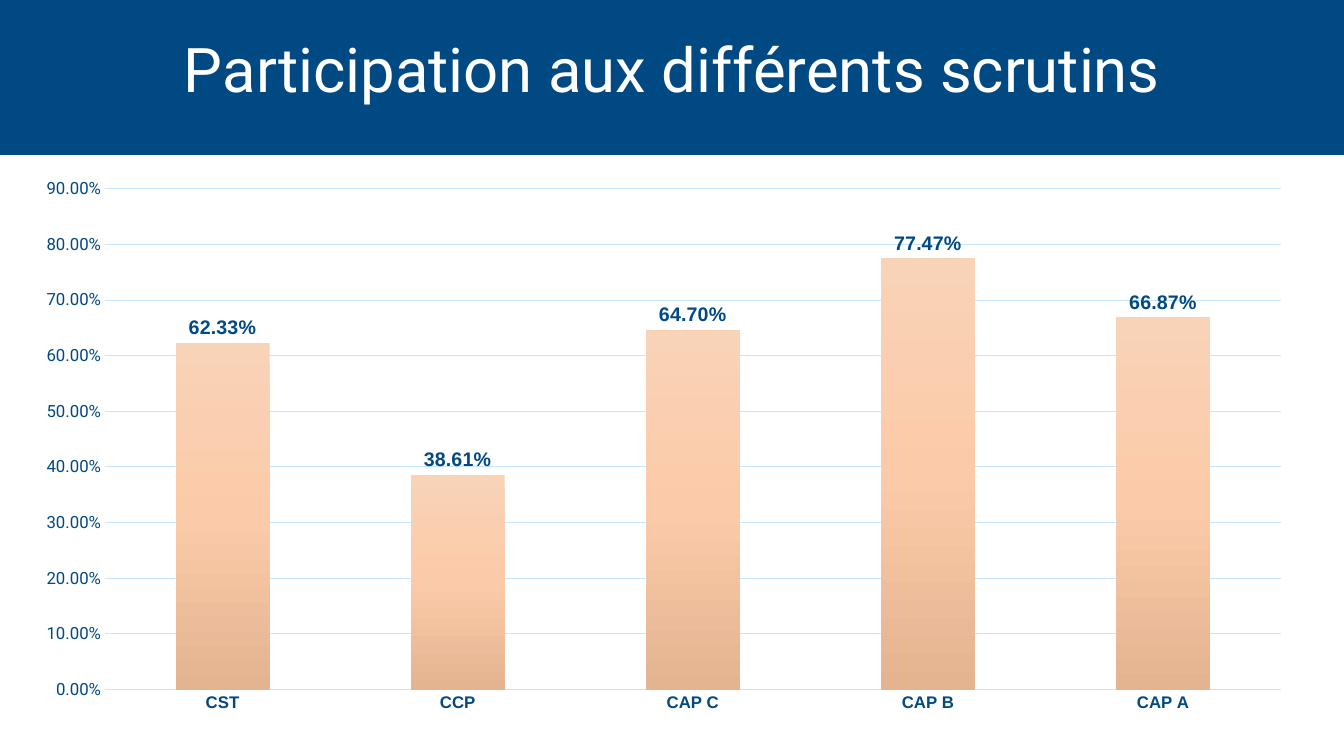
"""Build a slide with a column chart of voter turnout in each ballot."""
import lxml.etree
import pptx
import pptx.chart.data
import pptx.dml.color
import pptx.enum.chart
import pptx.enum.shapes
import pptx.enum.text
import pptx.oxml
import pptx.oxml.ns
import pptx.util

WIDTH, HEIGHT = pptx.util.Inches(13.33), pptx.util.Inches(7.5)
NAVY, PALE_BLUE, WHITE = "004982", "C6E6FF", "FFFFFF"
PEACH_STOPS = [(0, "F9D3B8"), (50, "FBCAA8"), (100, "E4B390")]
PERCENT = "0.00%"
TURNOUT = {"CST": 0.6233, "CCP": 0.3861, "CAP C": 0.647, "CAP B": 0.7747, "CAP A": 0.6687}
PLOT_SHARES = {"x": 0.065, "y": 0.035, "w": 0.915, "h": 0.904}


def color(code):
    """Turn a hex string into a colour."""
    return pptx.dml.color.RGBColor.from_string(code)


def area(left, top, width, height):
    """Turn shares of the slide into a position and size."""
    return int(left * WIDTH), int(top * HEIGHT), int(width * WIDTH), int(height * HEIGHT)


def style_font(font, name, size, code, bold=False):
    """Set the typeface, size, colour and weight of a font."""
    font.name, font.size, font.bold = name, pptx.util.Pt(size), bold
    font.color.rgb = color(code)


def style_line(line, code):
    """Give a chart line its colour and thin width."""
    line.color.rgb = color(code)
    line.width = pptx.util.Pt(0.75)


def add_heading(slide, wording):
    """Fill the title placeholder and lay the navy band behind it."""
    heading = slide.shapes.title
    heading.left, heading.top, heading.width, heading.height = area(0.069, 0, 0.863, 0.193)
    frame = heading.text_frame
    frame.text = wording
    frame.word_wrap = True
    frame.vertical_anchor = pptx.enum.text.MSO_ANCHOR.MIDDLE
    line = frame.paragraphs[0]
    line.alignment = pptx.enum.text.PP_ALIGN.CENTER
    line.line_spacing = 0.9
    style_font(line.font, "Roboto", 44, WHITE)

    band = slide.shapes.add_shape(
        pptx.enum.shapes.MSO_SHAPE.RECTANGLE, *area(-0.006, 0, 1.006, 0.205))
    band.shadow.inherit = False
    band.fill.solid()
    band.fill.fore_color.rgb = color(NAVY)
    band.line.fill.background()
    heading._element.addprevious(band._element)


def fill_downward(fill, stops):
    """Apply a top-to-bottom gradient with the given stops."""
    fill.gradient()
    fill.gradient_angle = 270
    stop_list = fill._fill._gradFill.find(pptx.oxml.ns.qn("a:gsLst"))
    for old_stop in list(stop_list):
        stop_list.remove(old_stop)
    for share, code in stops:
        stop = lxml.etree.SubElement(stop_list, pptx.oxml.ns.qn("a:gs"), pos=str(share * 1000))
        lxml.etree.SubElement(stop, pptx.oxml.ns.qn("a:srgbClr"), val=code)


def place_plot(chart, shares):
    """Fix the inner plot area as shares of the chart frame."""
    plot_area = chart._chartSpace.chart.plotArea
    for old_layout in plot_area.findall(pptx.oxml.ns.qn("c:layout")):
        plot_area.remove(old_layout)
    layout = lxml.etree.Element(pptx.oxml.ns.qn("c:layout"))
    manual = lxml.etree.SubElement(layout, pptx.oxml.ns.qn("c:manualLayout"))
    settings = [("layoutTarget", "inner"), ("xMode", "edge"), ("yMode", "edge"), *shares.items()]
    for tag, value in settings:
        lxml.etree.SubElement(manual, pptx.oxml.ns.qn(f"c:{tag}"), val=str(value))
    plot_area.insert(0, layout)


def style_axes(chart):
    """Format the ballot names and the percentage scale."""
    ballots, scale = chart.category_axis, chart.value_axis
    for axis in (ballots, scale):
        axis.major_tick_mark = axis.minor_tick_mark = pptx.enum.chart.XL_TICK_MARK.NONE
    style_font(ballots.tick_labels.font, "Arial", 12, NAVY, bold=True)
    style_line(ballots.format.line, PALE_BLUE)
    style_font(scale.tick_labels.font, "Roboto", 12, NAVY)
    scale.tick_labels.number_format = PERCENT
    scale.tick_labels.number_format_is_linked = False
    scale.minimum_scale, scale.maximum_scale, scale.major_unit = 0, 0.9, 0.1
    scale.format.line.fill.background()
    scale.has_major_gridlines = True
    style_line(scale.major_gridlines.format.line, PALE_BLUE)


def add_turnout_chart(slide, turnout):
    """Add the column chart with a percentage above each column."""
    figures = pptx.chart.data.CategoryChartData(number_format=PERCENT)
    figures.categories = list(turnout)
    figures.add_series("Series 1", list(turnout.values()))
    chart = slide.shapes.add_chart(
        pptx.enum.chart.XL_CHART_TYPE.COLUMN_CLUSTERED,
        *area(0.016, 0.224, 0.956, 0.733), figures).chart
    chart.has_legend = chart.has_title = False
    style_font(chart.font, "Roboto", 10, NAVY)
    place_plot(chart, PLOT_SHARES)
    style_axes(chart)

    columns = chart.plots[0]
    columns.gap_width = 150
    columns.vary_by_categories = False
    fill_downward(columns.series[0].format.fill, PEACH_STOPS)
    labels = columns.series[0].data_labels
    labels.show_value = True
    labels.number_format, labels.number_format_is_linked = PERCENT, False
    labels.position = pptx.enum.chart.XL_LABEL_POSITION.OUTSIDE_END
    style_font(labels.font, "Arial", 14, NAVY, bold=True)


def main():
    """Build and save the slide."""
    deck = pptx.Presentation()
    deck.slide_width, deck.slide_height = WIDTH, HEIGHT
    slide = deck.slides.add_slide(deck.slide_layouts.get_by_name("Title Only"))
    add_heading(slide, "Participation aux différents scrutins")
    add_turnout_chart(slide, TURNOUT)
    deck.save("out.pptx")


if __name__ == "__main__":
    main()
